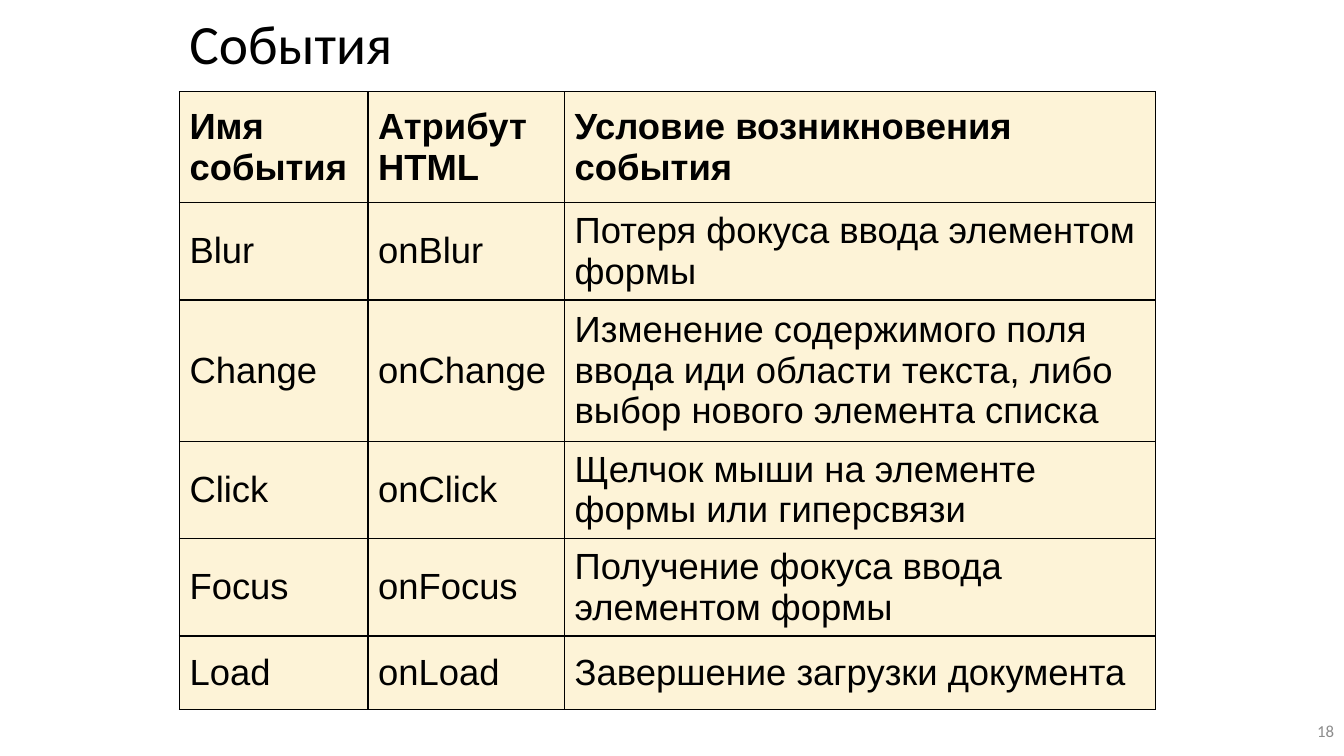
from lxml import etree
from pptx import Presentation
from pptx.dml.color import RGBColor
from pptx.enum.text import MSO_ANCHOR, PP_ALIGN
from pptx.oxml.ns import qn
from pptx.util import Inches, Pt

MIDDLE = MSO_ANCHOR.MIDDLE
LEFT, RIGHT = PP_ALIGN.LEFT, PP_ALIGN.RIGHT

COLORS = {"text": "000000", "number": "8C8C8C", "cell": "FDF3D7", "border": "000000"}
COLUMN_WIDTHS = [1.87, 1.95, 5.86]
ROW_HEIGHTS = [1.1, 0.73, 1.28, 0.73, 0.73, 0.73]
HEADER = ["Имя события", "Атрибут HTML", "Условие возникновения события"]
EVENTS = [
    ("Blur", "Потеря фокуса ввода элементом формы"),
    ("Change", "Изменение содержимого поля ввода иди области текста, либо выбор нового элемента списка"),
    ("Click", "Щелчок мыши на элементе формы или гиперсвязи"),
    ("Focus", "Получение фокуса ввода элементом формы"),
    ("Load", "Завершение загрузки документа"),
]


def write_text(text_frame, text, size, font_name, color, bold=False, align=LEFT):
    text_frame.text = text
    text_frame.word_wrap = True
    text_frame.vertical_anchor = MIDDLE
    paragraph = text_frame.paragraphs[0]
    paragraph.alignment = align
    font = paragraph.runs[0].font
    font.size, font.name, font.bold = Pt(size), font_name, bold
    font.color.rgb = RGBColor.from_string(COLORS[color])
    return paragraph


def add_borders(cell):
    """Draw a 1 pt line on all four sides; the lines must precede the fill in tcPr."""
    properties = cell._tc.get_or_add_tcPr()
    for position, side in enumerate(("lnL", "lnR", "lnT", "lnB")):
        line = etree.Element(qn(f"a:{side}"), w=str(Pt(1)))
        fill = etree.SubElement(line, qn("a:solidFill"))
        etree.SubElement(fill, qn("a:srgbClr"), val=COLORS["border"])
        properties.insert(position, line)


presentation = Presentation()
presentation.slide_width = Inches(13.33)
presentation.slide_height = Inches(7.5)
slide = presentation.slides.add_slide(presentation.slide_layouts[6])

number_box = slide.shapes.add_textbox(Inches(12.44), Inches(7), Inches(0.89), Inches(0.5))
write_text(number_box.text_frame, "18", 12, "Calibri", "number", align=RIGHT)

title_box = slide.shapes.add_textbox(Inches(1.78), Inches(0.08), Inches(9), Inches(0.76))
title = write_text(title_box.text_frame, "События", 39.6, "Calibri", "text")
title.line_spacing = 0.9

rows = [HEADER] + [[name, f"on{name}", condition] for name, condition in EVENTS]
table = slide.shapes.add_table(
    len(rows), len(HEADER), Inches(1.78), Inches(0.91),
    Inches(sum(COLUMN_WIDTHS)), Inches(sum(ROW_HEIGHTS)),
).table
for column, width in zip(table.columns, COLUMN_WIDTHS):
    column.width = Inches(width)
for row, height in zip(table.rows, ROW_HEIGHTS):
    row.height = Inches(height)

for row_index, texts in enumerate(rows):
    for column_index, text in enumerate(texts):
        cell = table.cell(row_index, column_index)
        write_text(cell.text_frame, text, 26, "Arial", "text", bold=row_index == 0)
        cell.vertical_anchor = MIDDLE
        cell.fill.solid()
        cell.fill.fore_color.rgb = RGBColor.from_string(COLORS["cell"])
        add_borders(cell)

presentation.save("out.pptx")
